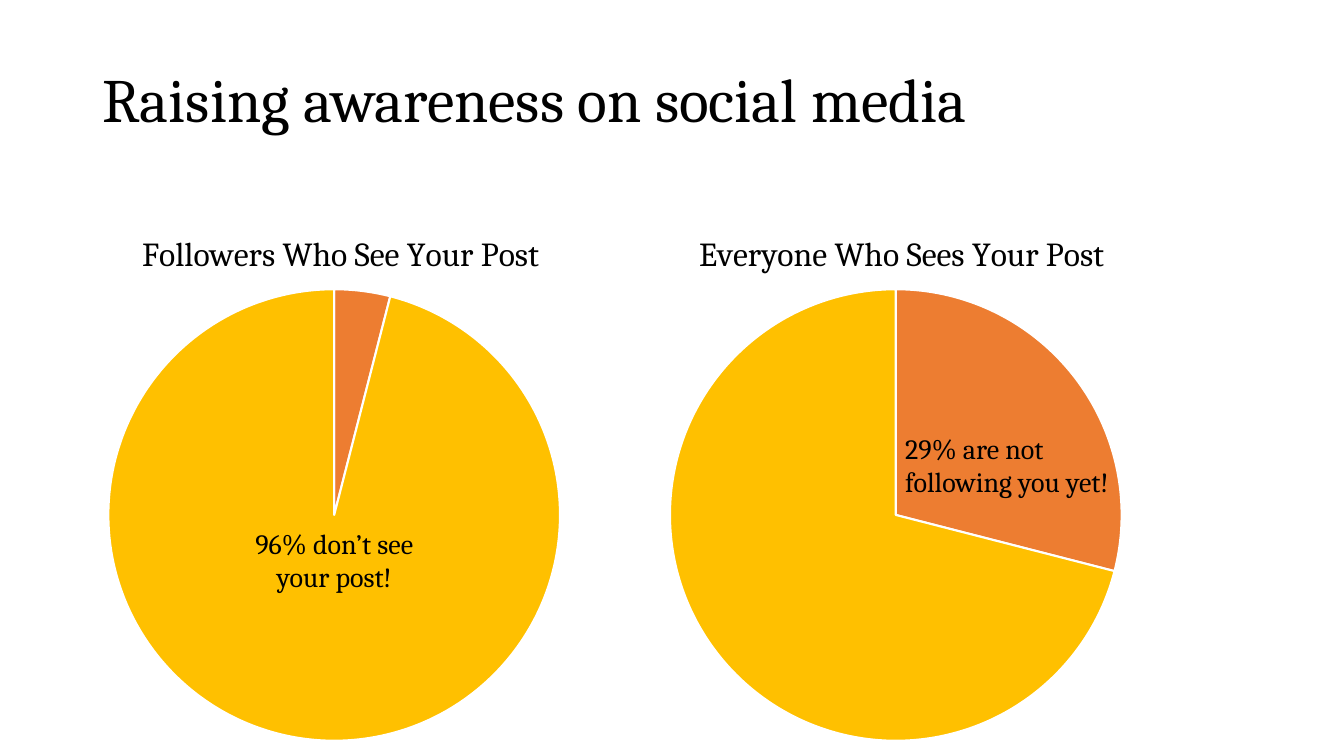
from pptx import Presentation
from pptx.chart.data import CategoryChartData as ChartData
from pptx.dml.color import RGBColor
from pptx.enum.chart import XL_CHART_TYPE as Kind
from pptx.enum.text import MSO_ANCHOR as Anchor, PP_ALIGN as Align
from pptx.oxml import parse_xml
from pptx.oxml.ns import nsdecls
from pptx.util import Inches, Pt

# Content
FONT, BLACK, WHITE = "Cambria", "000000", "FFFFFF"
TITLE = "Raising awareness on social media"
CATS = ["1", "2", "3", "4"]
HUES = ["ED7D31", "FFC000", "70AD47", "9E480E"]
PIES = [  # heading, heading width, chart left, chart width, values
    ("Followers Who See Your Post", 3.93, -0.77, 8.17, (4, 96, None, None)),
    ("Everyone Who Sees Your Post", 4.02, 5.23, 7.31, (29, 71, None, None)),
]
NOTES = [  # lines, box, alignment
    (["96% don’t see", "your post!"], (2.37, 5.17, 1.89, 0.77), Align.CENTER),
    (["29% are not", "following you yet!"], (8.88, 4.23, 2.33, 0.77), Align.LEFT),
]
TOP, HIGH = 1.98, 5.52            # both charts
HEAD, DISC, SIZE = 2.24, 2.87, 4.48  # heading top, pie top, pie diameter


def color(code):
    return RGBColor.from_string(code)


def style(font, size):
    font.name, font.size, font.bold = FONT, Pt(size), False
    font.color.rgb = color(BLACK)


def add_text(lines, box, size, align=Align.LEFT, anchor=Anchor.TOP,
             wrap=False, space=1.0):
    frame = slide.shapes.add_textbox(*map(Inches, box)).text_frame
    frame.word_wrap, frame.vertical_anchor = wrap, anchor
    for i, line in enumerate(lines):
        para = frame.add_paragraph() if i else frame.paragraphs[0]
        para.alignment, para.line_spacing = align, space
        run = para.add_run()
        run.text = line
        style(run.font, size)


def layout(inner=False, **spots):
    parts = '<c:layoutTarget val="inner"/>' if inner else ""
    parts += "".join(f'<c:{k}Mode val="edge"/>' for k in "xy")
    parts += "".join(f'<c:{k} val="{v:.4f}"/>' for k, v in spots.items())
    return parse_xml(f'<c:layout {nsdecls("c")}><c:manualLayout>{parts}'
                     '</c:manualLayout></c:layout>')


def add_pie(head, span, left, wide, vals):
    data = ChartData()
    data.categories = CATS
    data.add_series("Series 1", vals)
    box = map(Inches, (left, TOP, wide, HIGH))
    chart = slide.shapes.add_chart(Kind.PIE, *box, data).chart
    style(chart.font, 10)
    chart.has_legend = False

    # Heading
    chart.has_title = True
    title = chart.chart_title
    run = title.text_frame.paragraphs[0].add_run()
    run.text = head
    style(run.font, 24)
    title.include_in_layout = False
    node = title._element
    for old in node.findall("{*}layout"):
        node.remove(old)
    node.find("{*}tx").addnext(
        layout(x=0.5 - span / wide / 2, y=(HEAD - TOP) / HIGH))

    # Pie disc, centred across the chart
    area = chart._chartSpace.chart.plotArea
    for old in area.findall("{*}layout"):
        area.remove(old)
    area.insert(0, layout(True, x=0.5 - SIZE / wide / 2, y=(DISC - TOP) / HIGH,
                          w=SIZE / wide, h=SIZE / HIGH))

    # Slices
    plot = chart.plots[0]
    plot.vary_by_categories = True
    for i, hue in enumerate(HUES):
        form = plot.series[0].points[i].format
        form.fill.solid()
        form.fill.fore_color.rgb = color(hue)
        form.line.color.rgb = color(WHITE)
        form.line.width = Pt(1.5)


# Slide
deck = Presentation()
deck.slide_width, deck.slide_height = Inches(13.33), Inches(7.5)
slide = deck.slides.add_slide(deck.slide_layouts[6])

add_text([TITLE], (0.92, 0.4, 11.5, 1.24), 44, anchor=Anchor.MIDDLE,
         wrap=True, space=0.9)
for pie in PIES:
    add_pie(*pie)
for lines, box, align in NOTES:
    add_text(lines, box, 20, align=align)

deck.save("out.pptx")
